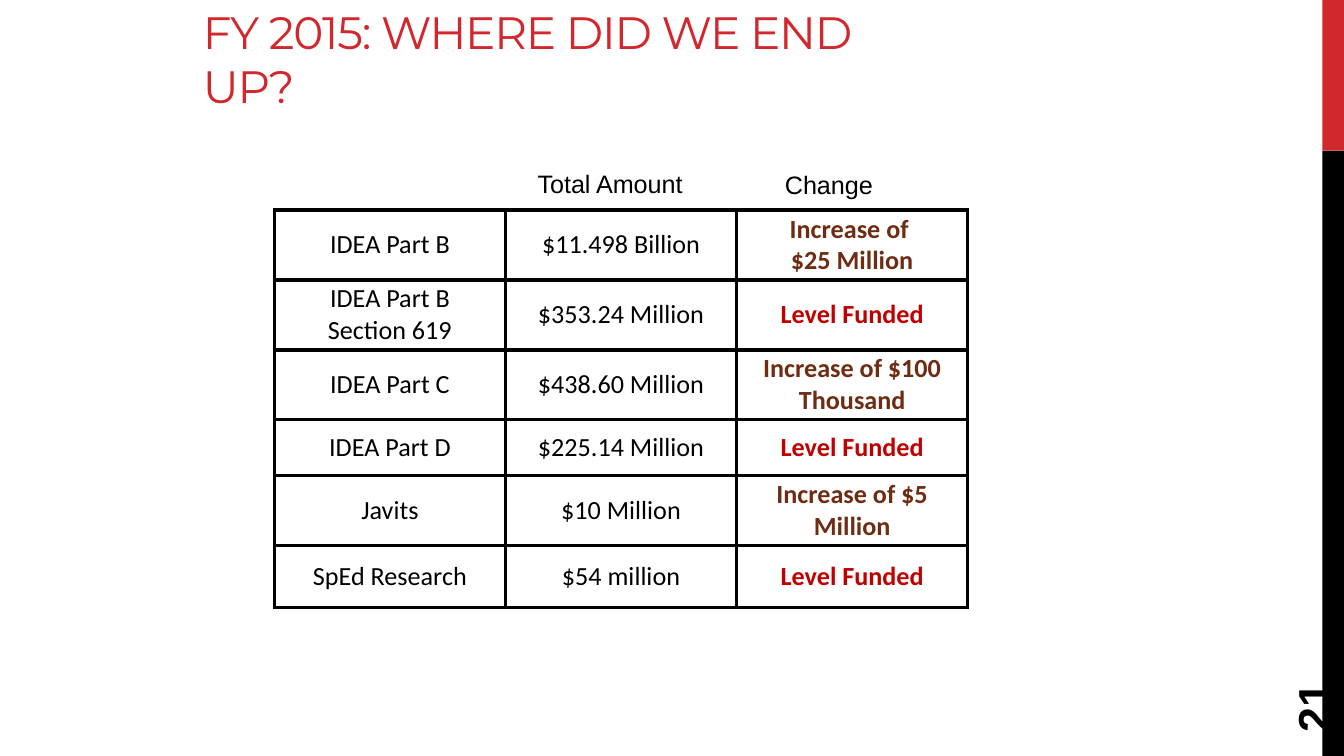
from dataclasses import dataclass

from lxml.etree import SubElement
from pptx import Presentation
from pptx.dml.color import RGBColor
from pptx.enum.shapes import MSO_SHAPE as Preset
from pptx.enum.text import MSO_ANCHOR as Anchor, MSO_AUTO_SIZE as AutoSize, PP_ALIGN as Align
from pptx.oxml.ns import qn
from pptx.util import Pt

BLACK, RED, BROWN, DARK_RED = "000000", "D1282E", "6E2C12", "C00000"
COLUMN_WIDTH = 123.84


@dataclass
class Area:
    left: float
    top: float
    width: float
    height: float

    def lengths(self) -> list:
        return [Pt(value) for value in (self.left, self.top, self.width, self.height)]


@dataclass
class Style:
    font: str
    size: float
    color: str = BLACK
    bold: bool = False


@dataclass
class Program:
    name: str
    amount: str
    change: str
    height: float


@dataclass
class Label:
    text: str
    area: Area
    style: Style
    inset: tuple = (0, 0)
    anchor: Anchor = Anchor.MIDDLE
    wrap: bool = True
    rotation: float = 0


HEADING = Style("Arial", 13.5)
BARS = [(Area(708.5, 0, 11.5, 80.8), RED), (Area(708.5, 80.8, 11.5, 324.2), BLACK)]
LABELS = [
    Label("21", Area(661, 344.2, 77.8, 28.8), Style("Arial", 24, bold=True), (5, 3), Anchor.TOP, rotation=270),
    Label("Total Amount", Area(288, 90, 78.5, 16.6), HEADING, wrap=False),
    Label("Change", Area(420.5, 90.4, 101.5, 16.6), HEADING),
]
PROGRAMS = [
    Program("IDEA Part B", "$11.498 Billion", "Increase of \n$25 Million", 37.5),
    Program("IDEA Part B\nSection 619", "$353.24 Million", "Level Funded", 37.5),
    Program("IDEA Part C", "$438.60 Million", "Increase of $100 Thousand", 37.5),
    Program("IDEA Part D", "$225.14 Million", "Level Funded", 30),
    Program("Javits", "$10 Million", "Increase of $5 Million", 37.5),
    Program("SpEd Research", "$54 million", "Level Funded", 33),
]


def rgb(color: str) -> RGBColor:
    return RGBColor.from_string(color)


def write(frame, text: str, style: Style, align: Align = Align.LEFT) -> None:
    frame.text = text
    for para in frame.paragraphs:
        para.alignment = align
        para.font.name = style.font
        para.font.size = Pt(style.size)
        para.font.bold = style.bold
        para.font.color.rgb = rgb(style.color)


def add_bar(page, area: Area, color: str) -> None:
    bar = page.shapes.add_shape(Preset.RECTANGLE, *area.lengths())
    bar.shadow.inherit = False
    bar.fill.solid()
    bar.fill.fore_color.rgb = rgb(color)
    bar.line.fill.background()


def set_title(page, text: str, area: Area) -> None:
    title = page.shapes.title
    title.left, title.top, title.width, title.height = area.lengths()
    frame = title.text_frame
    frame.auto_size = AutoSize.NONE
    frame.vertical_anchor = Anchor.BOTTOM
    write(frame, text, Style("Montserrat", 24.3, RED))
    for span in frame.paragraphs[0].runs:
        span._r.get_or_add_rPr().set("spc", "-60")


def add_label(page, label: Label) -> None:
    box = page.shapes.add_textbox(*label.area.lengths())
    box.rotation = label.rotation
    frame = box.text_frame
    frame.word_wrap = label.wrap
    frame.vertical_anchor = label.anchor
    frame.margin_left = frame.margin_right = Pt(label.inset[0])
    frame.margin_top = frame.margin_bottom = Pt(label.inset[1])
    write(frame, label.text, label.style)


def add_borders(cell, color: str, width: float) -> None:
    properties = cell._tc.get_or_add_tcPr()
    for side in ("a:lnL", "a:lnR", "a:lnT", "a:lnB"):
        line = SubElement(properties, qn(side), w=str(Pt(width)))
        fill = SubElement(line, qn("a:solidFill"))
        SubElement(fill, qn("a:srgbClr"), val=color)


def fill_cell(cell, text: str, style: Style) -> None:
    cell.margin_left = cell.margin_right = cell.margin_top = cell.margin_bottom = Pt(1.5)
    cell.vertical_anchor = Anchor.MIDDLE
    add_borders(cell, BLACK, 2)
    cell.fill.background()
    write(cell.text_frame, text, style, Align.CENTER)


def add_funding_table(page, programs: list[Program], left: float, top: float) -> None:
    area = Area(left, top, 3 * COLUMN_WIDTH, sum(program.height for program in programs))
    table = page.shapes.add_table(len(programs), 3, *area.lengths()).table
    table.first_row = table.horz_banding = False
    for column in table.columns:
        column.width = Pt(COLUMN_WIDTH)
    plain = Style("Calibri", 14)
    for row, program in zip(table.rows, programs):
        row.height = Pt(program.height)
        change_color = BROWN if program.change.startswith("Increase") else DARK_RED
        change = Style("Calibri", 14, change_color, True)
        texts = (program.name, program.amount, program.change)
        for cell, text, style in zip(row.cells, texts, (plain, plain, change)):
            fill_cell(cell, text, style)


def main() -> None:
    deck = Presentation()
    deck.slide_width, deck.slide_height = Pt(720), Pt(405)
    page = deck.slides.add_slide(deck.slide_layouts.get_by_name("Title Only"))
    for area, color in BARS:
        add_bar(page, area, color)
    set_title(page, "FY 2015: WHERE DID WE END UP?", Area(101.5, 16.6, 373.7, 47.5))
    add_funding_table(page, PROGRAMS, 147, 112.5)
    for label in LABELS:
        add_label(page, label)
    deck.save("out.pptx")


if __name__ == "__main__":
    main()
